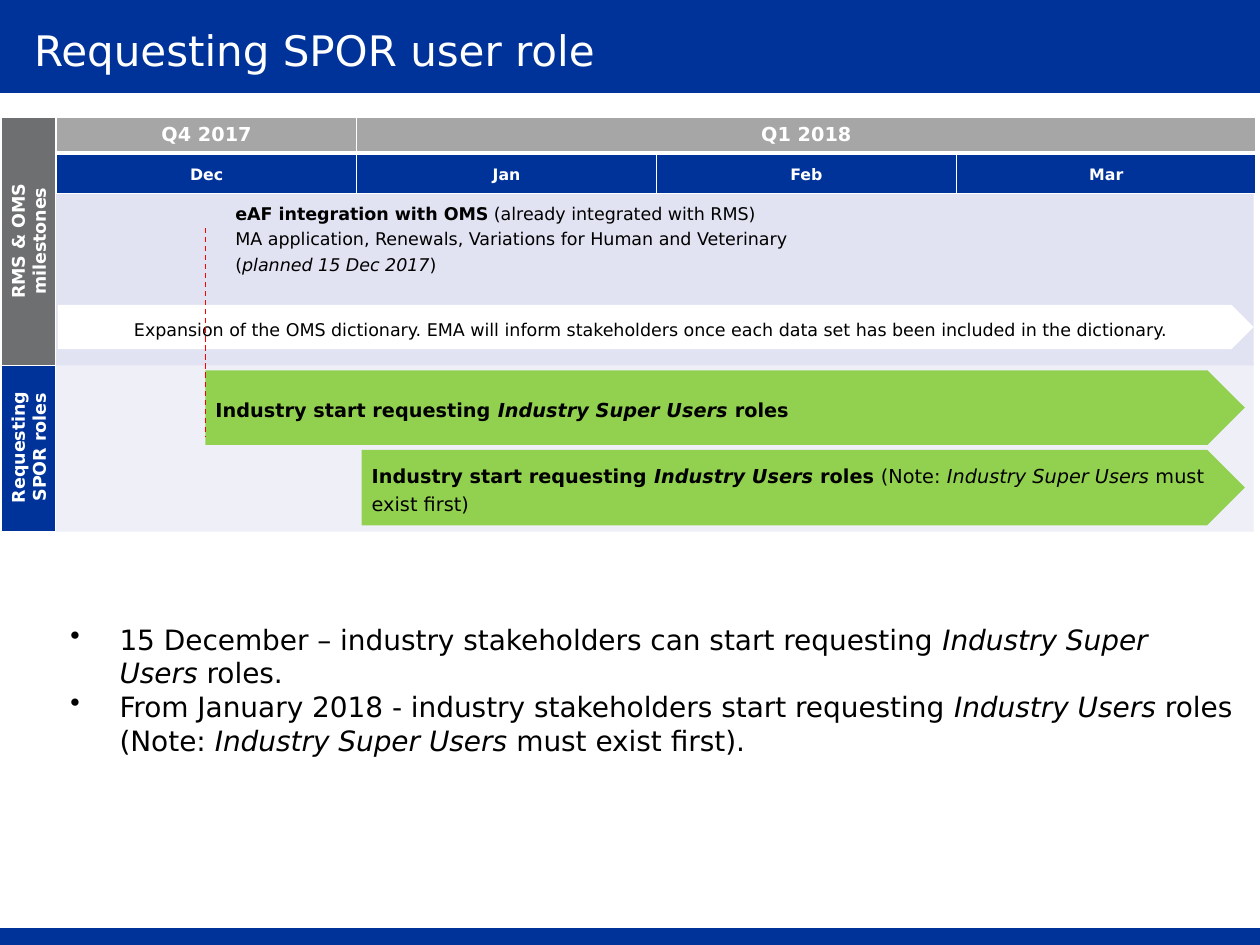
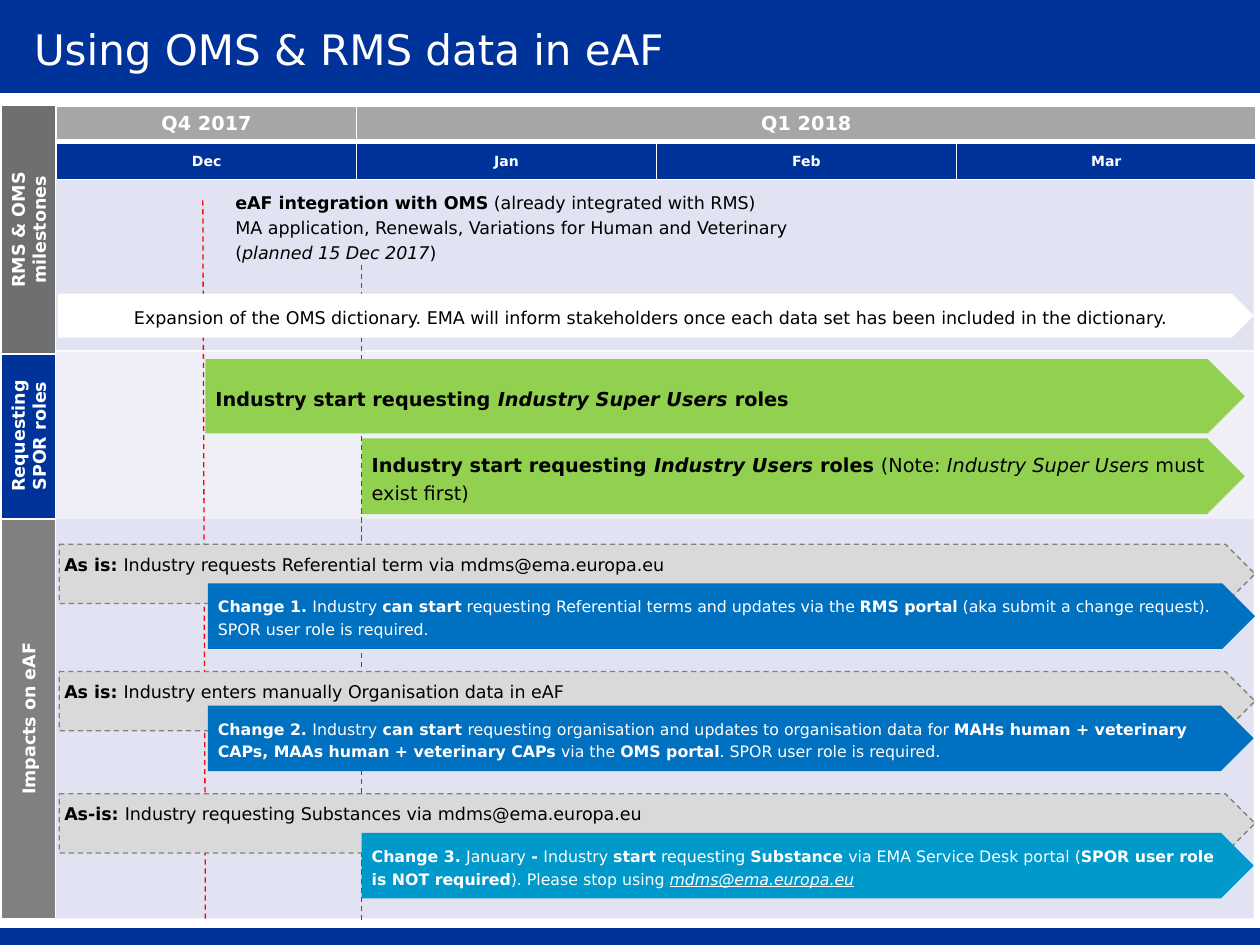
from lxml.etree import SubElement
from pptx import Presentation
from pptx.dml.color import RGBColor
from pptx.enum.dml import MSO_LINE
from pptx.enum.shapes import MSO_CONNECTOR, MSO_SHAPE
from pptx.enum.text import MSO_ANCHOR, PP_ALIGN
from pptx.oxml.ns import qn
from pptx.util import Inches, Pt

FONT = "DejaVu Sans"
HUE = {name: RGBColor.from_string(code) for name, code in {
    "navy": "003399", "white": "FFFFFF", "black": "000000", "red": "FF0000",
    "pale": "EEEFF7", "mist": "E1E3F2", "green": "92D050", "head": "A6A6A6",
    "slate": "6D6F71", "grey": "808080", "ash": "D9D9D9",
    "blue": "0070C0", "cyan": "0099CC"}.items()}
RECT, PLATE = MSO_SHAPE.RECTANGLE, MSO_SHAPE.PENTAGON
MID, TOP = MSO_ANCHOR.MIDDLE, MSO_ANCHOR.TOP
LEFT, MIDST = PP_ALIGN.LEFT, PP_ALIGN.CENTER

deck = Presentation()
deck.slide_width, deck.slide_height = Inches(10), Inches(7.5)
# Grid of 100 columns by 75 rows
COL, ROW = deck.slide_width // 100, deck.slide_height // 75


def box(kind, x, y, w, h, fill=None, edge=None, dash=False, text=(), size=10,
        ink="black", bold=None, align=LEFT, anchor=MID, pad=(0.8, 0.8),
        space=1.2, turn=False, dot=False):
    """Shape, or text box if kind is None; *bold* and _italic_ mark runs."""
    place = [int(v) for v in (x * COL, y * ROW, w * COL, h * ROW)]
    if kind is None:
        shape = page.shapes.add_textbox(*place)
    else:
        shape = page.shapes.add_shape(kind, *place)
        shape.shadow.inherit = False
        shape.fill.solid()
        shape.fill.fore_color.rgb = HUE[fill]
        if edge:
            shape.line.color.rgb = HUE[edge]
            shape.line.width = Pt(0.75)
            if dash:
                shape.line.dash_style = MSO_LINE.DASH
        else:
            shape.line.fill.background()
    if not text:
        return shape
    frame = shape.text_frame
    frame.word_wrap, frame.vertical_anchor = True, anchor
    frame.margin_left = frame.margin_right = int(pad[0] * COL)
    frame.margin_top = frame.margin_bottom = int(pad[1] * ROW)
    if turn:
        shape.element.find(".//" + qn("a:bodyPr")).set("vert", "vert270")
    for n, words in enumerate(text):
        para = frame.add_paragraph() if n else frame.paragraphs[0]
        para.alignment, para.line_spacing = align, space
        if dot:
            props = para._p.get_or_add_pPr()
            props.set("marL", str(int(3.9 * COL)))
            props.set("indent", str(int(-3.9 * COL)))
            SubElement(props, qn("a:buChar")).set("char", "•")
        if "*" in words or "_" in words:
            for i, part in enumerate(words.split("*")):
                for j, bit in enumerate(part.split("_")):
                    if bit:
                        run = para.add_run()
                        run.text = bit
                        run.font.bold, run.font.italic = i % 2 == 1, j % 2 == 1
        else:
            para.text = words
        font = para.font
        font.name, font.size, font.color.rgb = FONT, Pt(size), HUE[ink]
        if bold:
            font.bold = True
    return shape


def rule(x, y, to_x, to_y, ink, width, dash=False):
    line = page.shapes.add_connector(
        MSO_CONNECTOR.STRAIGHT, int(x * COL), int(y * ROW), int(to_x * COL), int(to_y * ROW))
    line.line.color.rgb, line.line.width = HUE[ink], Pt(width)
    if dash:
        line.line.dash_style = MSO_LINE.DASH
    SubElement(line.element.spPr, qn("a:effectLst"))


label = dict(edge="white", ink="white", bold=True, align=MIDST, pad=(0, 0),
             space=1.0, turn=True)

# As-is row, its text, change column, row, width, fill, right inset, text
impacts = [
    (43.2, "*As is: *Industry requests Referential term via mdms@ema.europa.eu",
     16.5, 46.3, 83.1, "blue", 2,
     "*Change 1. *Industry *can start* requesting Referential terms and updates via the "
     "*RMS portal* (aka submit a change request). SPOR user role is required."),
    (53.3, "*As is: *Industry enters manually Organisation data in eAF",
     16.5, 56, 83, "blue", 0.8,
     "*Change 2. *Industry* can start *requesting organisation and updates to organisation "
     "data for *MAHs human + veterinary CAPs, MAAs human + veterinary CAPs *via the "
     "*OMS portal*. SPOR user role is required."),
    (63, "*As-is: *Industry requesting Substances via mdms@ema.europa.eu",
     28.7, 66.1, 70.8, "cyan", 0.8,
     "*Change 3. *January* - *Industry *start* requesting *Substance *via EMA Service Desk "
     "portal (*SPOR user role is NOT required*). Please stop using _mdms@ema.europa.eu_"),
]

# Title, first row of the timeline, depth of its header, month size, title row
plans = [("Requesting SPOR user role", 9.3, 5.7, 9, 0.2),
         ("Using OMS & RMS data in eAF", 8.4, 5.4, 8, 0.1)]

for title, top, deep, small, rise in plans:
    page = deck.slides.add_slide(deck.slide_layouts[6])
    first = title == plans[0][0]

    # Bands and title
    box(RECT, 0, 73.6, 100, 1.4, "navy")
    box(RECT, 0, 0, 100, 7.4, "navy")
    for y in (7.4, 73.6):
        rule(0, y, 100, y, "white", 0.25)
    box(None, 2.7, rise, 70.9, 7.1, text=[title], size=24, ink="white",
        pad=(0, 0), space=Pt(31.7))

    # Roles lane
    box(RECT, 4.2, top + 19.5, 95.3, 13.4, "pale")
    box(RECT, 0.1, top + 19.5, 4.3, 13.4, "navy", text=["Requesting SPOR roles"], **label)
    box(PLATE, 28.7, top + 26.4, 70.1, 6, "green", size=11,
        text=["*Industry start requesting _Industry Users_ roles *"
              "(Note: _Industry Super Users_ must exist first)"])

    # Milestones lane and calendar
    box(RECT, 4.2, top + deep, 95.3, 14, "mist")
    grid = page.shapes.add_table(2, 4, int(4.5 * COL), int(top * ROW),
                                 int(95.2 * COL), int(4.1 * ROW)).table
    grid.first_row = grid.horz_banding = False
    for col in grid.columns:
        col.width = int(23.8 * COL)
    for row, high in zip(grid.rows, (2.1, 2)):
        row.height = int(high * ROW)
    grid.cell(0, 1).merge(grid.cell(0, 3))
    for r, names in enumerate([["Q4 2017", "Q1 2018", "", ""], ["Dec", "Jan", "Feb", "Mar"]]):
        for c, name in enumerate(names):
            cell = grid.cell(r, c)
            props = cell._tc.get_or_add_tcPr()
            for side in "LRTB":
                thick = 3 if side == "BT"[r] else 1
                edge = SubElement(props, qn("a:ln" + side), w=str(Pt(thick)))
                paint = SubElement(edge, qn("a:solidFill"))
                SubElement(paint, qn("a:srgbClr"), val=str(HUE["white"]))
            cell.fill.solid()
            cell.fill.fore_color.rgb = HUE["navy" if r else "head"]
            cell.margin_left = cell.margin_right = int((1 if r else 0.5) * COL)
            cell.margin_top = cell.margin_bottom = int((0.7 if r else 0.5) * ROW)
            para = cell.text_frame.paragraphs[0]
            para.text, para.alignment = name, MIDST
            para.line_spacing = 1.2 if r else 1.0
            font = para.font
            font.name, font.size, font.bold = FONT, Pt(small if r else 11), True
            font.color.rgb = HUE["white"]
    box(RECT, 0.1, top, 4.3, 19.7, "slate", text=["RMS & OMS\nmilestones"], **label)
    box(None, 17.7, top + 6, 63, 7.1, anchor=TOP, pad=(1, 0.5),
        text=["*eAF integration with OMS* (already integrated with RMS)",
              "MA application, Renewals, Variations for Human and Veterinary",
              "(_planned 15 Dec 2017_)"])

    # Impacts lane
    if not first:
        box(RECT, 4.2, 41.2, 95.3, 31.7, "mist")
        box(RECT, 0.1, 41.2, 4.3, 31.7, "grey", text=["Impacts on eAF"], **label)
        rule(16.1, 15.9, 16.3, 73, "red", 0.75, True)
        rule(28.7, 21, 28.7, 73, "red", 0.75, True)
        for y, now, x, next_y, w, fill, inset, then in impacts:
            box(PLATE, 4.7, y, 94.9, 4.7, "ash", "grey", True, [now],
                anchor=TOP, pad=(0.4, 0.4))
            change = box(PLATE, x, next_y, w, 5.2, fill, text=[then], size=9, ink="white")
            change.text_frame.margin_right = int(inset * COL)
        change.text_frame.paragraphs[0].runs[-1].font.underline = True

    # Arrows on top
    box(PLATE, 4.6, top + 14.9, 94.9, 3.5, "white", align=MIDST,
        text=["Expansion of the OMS dictionary. EMA will inform stakeholders once "
              "each data set has been included in the dictionary."])
    box(PLATE, 16.3, top + 20.1, 82.5, 5.9, "green", size=11,
        text=["*Industry start requesting _Industry Super Users _roles*"])

    # Start line and summary
    if first:
        rule(16.3, 18.1, 16.3, 34.7, "red", 0.75, True)
        box(None, 4.6, 48.9, 94.2, 11.8, size=16, anchor=TOP, pad=(1, 0.5),
            space=1.0, dot=True,
            text=["15 December – industry stakeholders can start requesting "
                  "_Industry Super Users _roles.",
                  "From January 2018 - industry stakeholders start requesting "
                  "_Industry Users_ roles (Note: _Industry Super Users_ must exist first)."])

deck.save("out.pptx")
